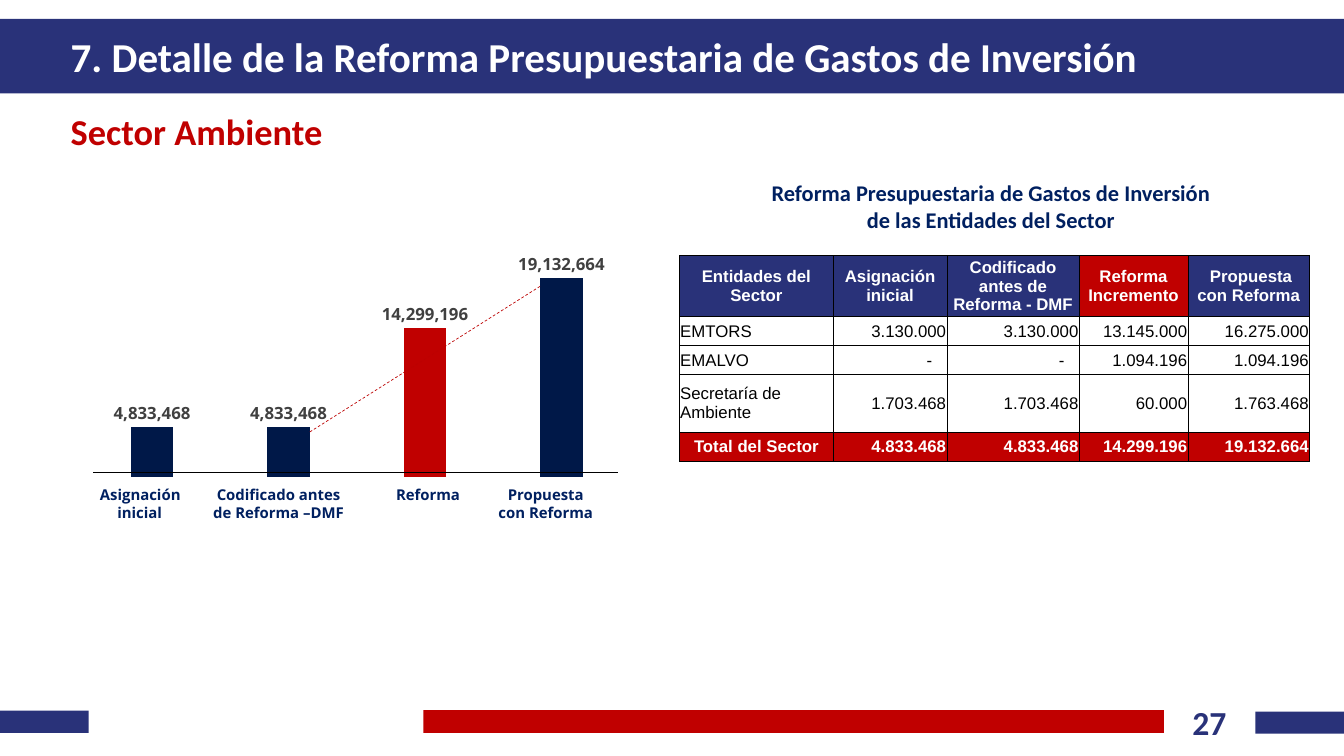
import pptx
import pptx.chart.data
import pptx.dml.color
import pptx.enum.chart
import pptx.enum.dml
import pptx.enum.shapes
import pptx.enum.text
import pptx.oxml
import pptx.oxml.ns
import pptx.util

Cm = pptx.util.Cm
Pt = pptx.util.Pt
RGB = pptx.dml.color.RGBColor
ALIGN = pptx.enum.text.PP_ALIGN
MID = pptx.enum.text.MSO_ANCHOR.MIDDLE
TOP = pptx.enum.text.MSO_ANCHOR.TOP

BLUE = RGB(0x29, 0x32, 0x79)
RED = RGB(0xC0, 0x00, 0x00)
NAVY = RGB(0x00, 0x20, 0x60)
DARK = RGB(0x00, 0x18, 0x48)
DASH = RGB(0xBC, 0x00, 0x00)
GRAY = RGB(0x40, 0x40, 0x40)
WHITE = RGB(0xFF, 0xFF, 0xFF)
BLACK = RGB(0x00, 0x00, 0x00)

HEAD = ["Entidades del Sector", "Asignación inicial",
        "Codificado antes de Reforma - DMF", "Reforma Incremento",
        " Propuesta con Reforma"]
ROWS = [
    HEAD,
    ["EMTORS", "3.130.000", "3.130.000", "13.145.000", "16.275.000"],
    ["EMALVO", "-", "-", "1.094.196", "1.094.196"],
    ["Secretaría de Ambiente", "1.703.468", "1.703.468", "60.000", "1.763.468"],
    ["Total del Sector", "4.833.468", "4.833.468", "14.299.196", "19.132.664"],
]
WIDTHS = [5.82, 4.29, 5, 4.11, 4.6]
HEIGHTS = [2.18, 1.09, 1.09, 2.18, 1.09]
TABS = [1.5, 6.75, 12.4, 16.85]


def apply(item, vals):
    for key, val in vals.items():
        setattr(item, key, val)


def style(font, size, color, face="Calibri", bold=True):
    apply(font, {"size": Pt(size), "name": face, "bold": bold})
    font.color.rgb = color


def add_bar(slide, box, color):
    bar = slide.shapes.add_shape(
        pptx.enum.shapes.MSO_SHAPE.RECTANGLE, *map(Cm, box))
    bar.shadow.inherit = False
    bar.fill.solid()
    bar.fill.fore_color.rgb = color
    bar.line.fill.background()


def add_text(slide, box, lines, size, color, face="Calibri",
             align=ALIGN.LEFT, anchor=MID, pad=(0.46, 0.23), tabs=()):
    frame = slide.shapes.add_textbox(*map(Cm, box)).text_frame
    side, edge = map(Cm, pad)
    apply(frame, {"word_wrap": True, "vertical_anchor": anchor,
                  "margin_left": side, "margin_right": side,
                  "margin_top": edge, "margin_bottom": edge})
    for i, line in enumerate(lines):
        par = frame.add_paragraph() if i else frame.paragraphs[0]
        par.alignment = align
        if tabs:
            stops = pptx.oxml.ns.qn("a:tabLst")
            group = par._p.get_or_add_pPr().makeelement(stops, {})
            par._p.get_or_add_pPr().append(group)
            for pos in tabs:
                group.append(group.makeelement(
                    pptx.oxml.ns.qn("a:tab"),
                    {"pos": str(Cm(pos)), "algn": "ctr"}))
        run = par.add_run()
        run.text = line
        style(run.font, size, color, face)


def add_line(slide, ends, color, dash=None):
    link = slide.shapes.add_connector(
        pptx.enum.shapes.MSO_CONNECTOR.STRAIGHT, *map(Cm, ends))
    link.line.color.rgb = color
    apply(link.line, {"width": Pt(0.75), "dash_style": dash})
    props = link._element.spPr
    props.append(props.makeelement(pptx.oxml.ns.qn("a:effectLst"), {}))


def add_chart(slide, box):
    data = pptx.chart.data.CategoryChartData()
    data.categories = ["1", "2", "3", "4"]
    data.add_series("Series 1", [4833468, 4833468, 14299196, 19132664])
    kind = pptx.enum.chart.XL_CHART_TYPE.COLUMN_CLUSTERED
    chart = slide.shapes.add_chart(kind, *map(Cm, box), data).chart
    apply(chart, {"has_legend": False, "has_title": False})
    style(chart.font, 10, BLACK, "Open Sans", False)
    apply(chart.category_axis, {"visible": False})
    apply(chart.value_axis, {"visible": False, "has_major_gridlines": False,
                             "minimum_scale": 0, "maximum_scale": 25000000})
    plot = chart.plots[0]
    apply(plot, {"gap_width": 219, "overlap": -27,
                 "vary_by_categories": False})
    bars = plot.series[0]
    for part, color in ((bars, DARK), (bars.points[2], RED)):
        part.format.fill.solid()
        part.format.fill.fore_color.rgb = color
    tags = bars.data_labels
    apply(tags, {"show_value": True, "number_format": "#,##0",
                 "number_format_is_linked": False,
                 "position": pptx.enum.chart.XL_LABEL_POSITION.OUTSIDE_END})
    style(tags.font, 18, GRAY, "Open Sans")


def add_edges(cell):
    props = cell._tc.get_or_add_tcPr()
    for side in "LRTB":
        props.append(pptx.oxml.parse_xml(
            f'<a:ln{side} {pptx.oxml.ns.nsdecls("a")} w="{Pt(0.5)}">'
            f'<a:solidFill><a:srgbClr val="{BLACK}"/></a:solidFill>'
            f'</a:ln{side}>'))


def fill_cell(cell, text, row, col):
    head, total = row == 0, row == len(ROWS) - 1
    strong = head or total
    apply(cell, {"vertical_anchor": MID, "margin_left": Cm(0.03),
                 "margin_right": Cm(0.56 if text == "-" else 0.03),
                 "margin_top": Cm(0.03), "margin_bottom": 0})
    add_edges(cell)
    if strong:
        cell.fill.solid()
        cell.fill.fore_color.rgb = RED if total or col == 3 else BLUE
    else:
        cell.fill.background()
    par = cell.text_frame.paragraphs[0]
    if head or (total and col == 0):
        par.alignment = ALIGN.CENTER
    else:
        par.alignment = ALIGN.RIGHT if col else ALIGN.LEFT
    run = par.add_run()
    run.text = text
    style(run.font, 18, WHITE if strong else BLACK, "Arial", strong)


def add_table(slide, left, top):
    table = slide.shapes.add_table(
        len(ROWS), len(HEAD), Cm(left), Cm(top),
        Cm(sum(WIDTHS)), Cm(sum(HEIGHTS))).table
    apply(table, {"first_row": False, "horz_banding": False})
    for col, width in zip(table.columns, WIDTHS):
        col.width = Cm(width)
    for row, height in zip(table.rows, HEIGHTS):
        row.height = Cm(height)
    for r, texts in enumerate(ROWS):
        for c, text in enumerate(texts):
            fill_cell(table.cell(r, c), text, r, c)


def main():
    deck = pptx.Presentation()
    apply(deck, {"slide_width": Cm(50.8), "slide_height": Cm(28.58)})
    slide = deck.slides.add_slide(deck.slide_layouts[6])

    # Footer and page number
    add_bar(slide, (16, 26.85, 27.99, 0.86), RED)
    add_bar(slide, (0, 26.87, 3.35, 0.84), BLUE)
    add_bar(slide, (47.45, 26.9, 3.35, 0.84), BLUE)
    add_text(slide, (43.99, 26.42, 3.45, 1.8), ["27"], 36, BLUE,
             align=ALIGN.CENTER, anchor=TOP, pad=(0.25, 0.13))

    # Title band and sector
    add_bar(slide, (0, 0.71, 50.8, 2.82), BLUE)
    add_text(slide, (2.21, 0.71, 45.11, 2.82),
             ["7. Detalle de la Reforma Presupuestaria de Gastos de Inversión"],
             44, WHITE)
    add_text(slide, (2.21, 3.53, 16.36, 2.87), ["Sector Ambiente"], 39, RED)

    # Chart with trend line, base line and labels
    add_chart(slide, (2.74, 8, 21.49, 10.24))
    add_line(slide, (11.71, 16.33, 20.42, 10.82), DASH,
             pptx.enum.dml.MSO_LINE.DASH)
    add_text(slide, (3.53, 18.24, 21.23, 1.63),
             ["\tAsignación\tCodificado antes\tReforma\tPropuesta",
              "\tinicial\tde Reforma –DMF\t\tcon Reforma"],
             16, NAVY, "Open Sans", anchor=TOP, pad=(0.25, 0.13), tabs=TABS)
    add_line(slide, (3.53, 17.86, 23.37, 17.86), BLACK)

    # Table with heading
    add_text(slide, (25.4, 6.71, 24.1, 2.13),
             ["Reforma Presupuestaria de Gastos de Inversión",
              "de las Entidades del Sector"], 24, NAVY, align=ALIGN.CENTER)
    add_table(slide, 25.68, 9.65)

    deck.save("out.pptx")


if __name__ == "__main__":
    main()
